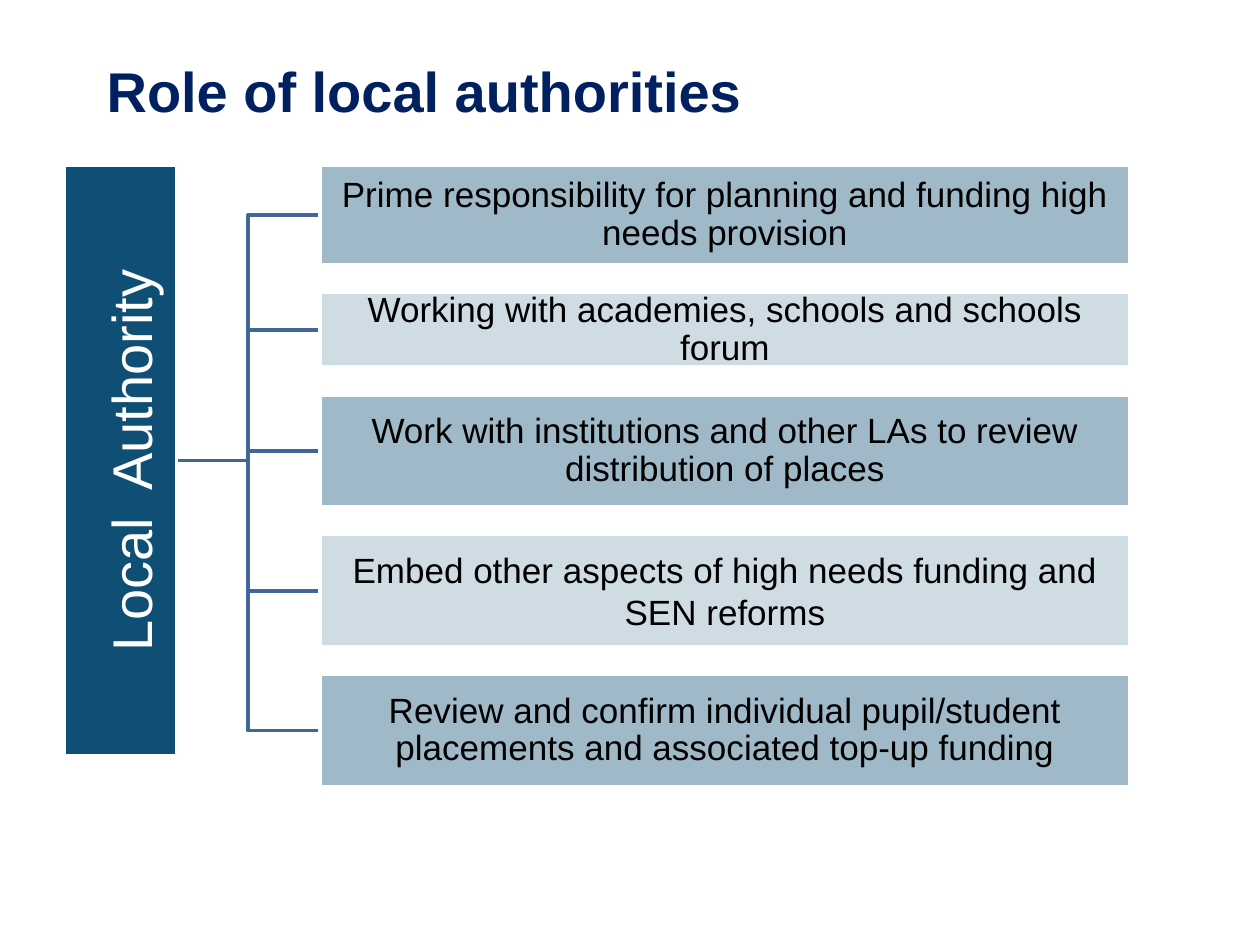
import pptx
import pptx.dml.color
import pptx.enum.shapes
import pptx.enum.text
import pptx.util

Cm = pptx.util.Cm
Pt = pptx.util.Pt
RGBColor = pptx.dml.color.RGBColor
Align = pptx.enum.text.PP_ALIGN

NAVY = RGBColor(0x00, 0x20, 0x60)
TEAL = RGBColor(0x10, 0x4F, 0x75)
MID = RGBColor(0x9F, 0xB9, 0xC8)
PALE = RGBColor(0xCF, 0xDC, 0xE3)
BLUE = RGBColor(0x3F, 0x67, 0x97)
WHITE = RGBColor(0xFF, 0xFF, 0xFF)
BLACK = RGBColor(0x00, 0x00, 0x00)

# Wording, height in cm, line spacing
ROLES = [
    ("Prime responsibility for planning and funding high needs provision", 2.01, 0.9),
    ("Working with academies, schools and schools forum", 1.5, 0.9),
    ("Work with institutions and other LAs to review distribution of places", 2.26, 0.9),
    ("Embed other aspects of high needs funding and SEN reforms", 2.26, 1.0),
    ("Review and confirm individual pupil/student placements and "
     "associated top-up funding", 2.26, 0.9),
]
GAP = 0.56


def write(shape, runs, color, bold=False, align=Align.CENTER, space=1.0, inset=0.03):
    """Fill a shape with one paragraph made of (text, size) runs."""
    frame = shape.text_frame
    frame.word_wrap = True
    frame.vertical_anchor = pptx.enum.text.MSO_ANCHOR.MIDDLE
    frame.margin_left = frame.margin_right = Cm(inset)
    frame.margin_top = frame.margin_bottom = Cm(inset)
    para = frame.paragraphs[0]
    para.alignment = align
    para.line_spacing = space
    for text, size in runs:
        run = para.add_run()
        run.text = text
        font = run.font
        font.name = "Arial"
        font.size = Pt(size)
        font.bold = bold
        font.color.rgb = color


def add_block(slide, left, top, width, height, fill):
    block = slide.shapes.add_shape(
        pptx.enum.shapes.MSO_SHAPE.RECTANGLE,
        Cm(left), Cm(top), Cm(width), Cm(height))
    block.shadow.inherit = False
    block.fill.solid()
    block.fill.fore_color.rgb = fill
    block.line.color.rgb = WHITE
    block.line.width = Pt(2)
    return block


def add_title(slide, left, top, width, height):
    box = slide.shapes.add_textbox(Cm(left), Cm(top), Cm(width), Cm(height))
    write(box, [("Role of local authorities", 32)], NAVY, bold=True,
          align=Align.LEFT, inset=0.25)


def add_branch(slide, left, right, start, end):
    """Draw a stepped line that turns halfway between left and right."""
    mid = (left + right) / 2
    pen = slide.shapes.build_freeform(Cm(left), Cm(start))
    pen.add_line_segments(
        [(Cm(mid), Cm(start)), (Cm(mid), Cm(end)), (Cm(right), Cm(end))],
        close=False)
    branch = pen.convert_to_shape()
    branch.shadow.inherit = False
    branch.fill.background()
    branch.line.color.rgb = BLUE
    branch.line.width = Pt(2)


def add_root(slide, left, top, width, height):
    """Place an upright bar, given the box it covers after its quarter turn."""
    shift = (height - width) / 2
    bar = add_block(slide, left - shift, top + shift, height, width, TEAL)
    bar.rotation = 270
    write(bar, [("Local", 32), (" ", 56), ("Authority", 32)], WHITE,
          space=0.9, inset=0.05)


def add_tree(slide, left, top, width, height):
    """Draw the bar, its branches and the roles from a given top-left box."""
    thick = 2.26
    role_left = left + 5.15
    tops = [top + sum(role[1] + GAP for role in ROLES[:i])
            for i in range(len(ROLES))]
    for y, role in reversed(list(zip(tops, ROLES))):
        add_branch(slide, left + thick, role_left, top + height / 2, y + role[1] / 2)
    add_root(slide, left, top, thick, height)
    for i, (text, tall, space) in enumerate(ROLES):
        block = add_block(slide, role_left, tops[i], left + width - role_left,
                          tall, PALE if i % 2 else MID)
        write(block, [(text, 20)], BLACK, space=space)


def main():
    deck = pptx.Presentation()
    deck.slide_width = Cm(25.4)
    deck.slide_height = Cm(19.05)
    slide = deck.slides.add_slide(deck.slide_layouts[6])
    add_title(slide, 1.9, 0.91, 21.59, 1.8)
    add_tree(slide, 1.3, 3.33, 21.48, 11.91)
    deck.save("out.pptx")


if __name__ == "__main__":
    main()
